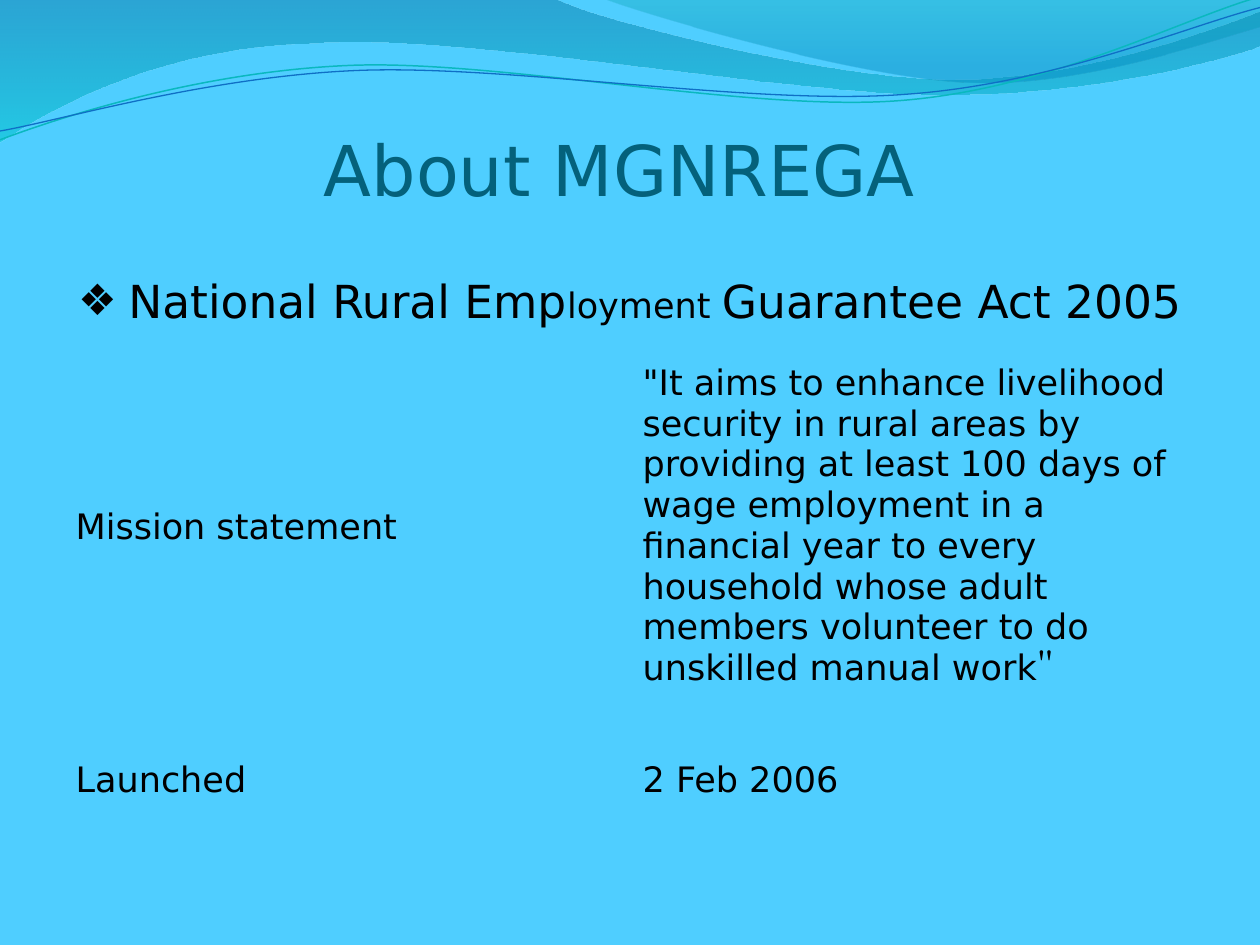
from dataclasses import dataclass
from lxml.etree import SubElement
from pptx import Presentation
from pptx.dml.color import RGBColor
from pptx.enum.text import MSO_ANCHOR as Anchor, PP_ALIGN as Align
from pptx.oxml.ns import qn
from pptx.util import Inches, Pt


@dataclass(frozen=True)
class Theme:
    background: str = "4FCEFF"
    title: str = "04617B"
    text: str = "000000"
    sans: str = "DejaVu Sans"
    serif: str = "TeX Gyre Pagella"
    title_size: int = 40
    act_size: int = 26
    quote_size: int = 24
    text_size: int = 20


theme = Theme()
WIDTH, HEIGHT = 10, 7.5
MARGIN = WIDTH * 0.05
CONTENT_WIDTH = WIDTH - 2 * MARGIN

TITLE = "About MGNREGA"
ACT = [
    (" ", theme.serif, theme.act_size),
    ("National Rural Emp", theme.sans, theme.act_size),
    ("loyment ", theme.sans, theme.text_size),
    ("Guarantee Act 2005", theme.sans, theme.act_size),
]
MISSION = (
    '"It aims to enhance livelihood security in rural areas by providing '
    "at least 100 days of wage employment in a financial year to every "
    "household whose adult members volunteer to do unskilled manual work"
)
FACTS = [
    ([("Mission statement", theme.sans, theme.text_size)],
     [(MISSION, theme.sans, theme.text_size),
      ('"', theme.serif, theme.quote_size)]),
    ([], []),
    ([("Launched", theme.sans, theme.text_size)],
     [("2 Feb 2006", theme.sans, theme.text_size)]),
    ([], []),
]
ROW_HEIGHTS = [2.72, 0.4, 0.48, 0.67]

BANDS = [
    ([(0, 0), (4.4, -0.01),
      (4.76, 0.17, 6.64, 0.63, 7.58, 0.63),
      (8.53, 0.63, 9.58, 0.26, 10, 0.09), (10.01, 0.36),
      (9.83, 0.44, 8.7, 0.76, 7.46, 0.75),
      (6.22, 0.75, 3.82, 0.28, 2.57, 0.34),
      (1.29, 0.36, 0.46, 0.83, -0.01, 1.13)],
     [(0, "0074A1", 45), (1, "00C6CF", 55)]),
    ([(4.79, -0.01),
      (5.09, 0.11, 6.82, 0.62, 7.69, 0.65),
      (8.56, 0.69, 9.61, 0.32, 10, 0.21), (10, 0)],
     [(0, "00A1A9", 30), (0.8, "008BBF", 45)]),
]
WAVES = [
    ([(0, 1.11),
      (0.48, 0.93, 1.58, 0.57, 2.77, 0.52),
      (3.95, 0.47, 5.93, 0.89, 7.13, 0.8),
      (8.33, 0.71, 9.38, 0.15, 9.98, -0.02)], "0AB8BF", 0.85),
    ([(0, 1.04),
      (0.47, 0.96, 1.64, 0.61, 2.83, 0.56),
      (4.03, 0.51, 5.97, 0.84, 7.17, 0.75),
      (8.36, 0.67, 9.41, 0.21, 10, 0.06)], "0F6FC6", 0.75),
]
NO_GRID_STYLE = "{2D5ABB26-0587-4C30-8999-92F81FD0307C}"


def rgb(value):
    return RGBColor.from_string(value)


def draw(slide, outline, close):
    corners = [tuple(map(Inches, segment[-2:])) for segment in outline]
    builder = slide.shapes.build_freeform(*corners[0])
    builder.add_line_segments(corners[1:], close=close)
    outlined = builder.convert_to_shape()
    outlined.shadow.inherit = False
    steps = list(outlined._element.spPr.iter(qn("a:lnTo")))
    for step, segment in zip(steps, outline[1:]):
        if len(segment) == 6:
            step.tag = qn("a:cubicBezTo")
            for child in list(step):
                step.remove(child)
            for x, y in zip(segment[::2], segment[1::2]):
                SubElement(step, qn("a:pt"), x=str(Inches(x) - outlined.left),
                           y=str(Inches(y) - outlined.top))
    return outlined


def add_band(slide, outline, stops):
    band = draw(slide, outline, True)
    band.line.fill.background()
    band.fill.gradient()
    band.fill.gradient_angle = 270
    for stop, (position, color, _) in zip(band.fill.gradient_stops, stops):
        stop.position = position
        stop.color.rgb = rgb(color)
    colors = band._element.spPr.iter(qn("a:srgbClr"))
    for color, (_, _, opacity) in zip(colors, stops):
        SubElement(color, qn("a:alpha"), val=str(opacity * 1000))


def add_wave(slide, outline, color, weight):
    wave = draw(slide, outline, False)
    wave.fill.background()
    wave.line.color.rgb = rgb(color)
    wave.line.width = Pt(weight)


def write(paragraph, parts, color):
    paragraph.font.color.rgb = rgb(color)
    for words, face, size in parts:
        run = paragraph.add_run()
        run.text = words
        run.font.name, run.font.size = face, Pt(size)
        run.font.color.rgb = rgb(color)


def add_text(slide, left, top, width, height, parts, color):
    frame = slide.shapes.add_textbox(
        *map(Inches, (left, top, width, height))).text_frame
    frame.word_wrap = True
    paragraph = frame.paragraphs[0]
    paragraph.alignment = Align.CENTER
    write(paragraph, parts, color)
    return frame


def add_bullet(paragraph):
    paragraph.space_before = Pt(theme.act_size * 0.2)
    props = paragraph._p.get_or_add_pPr()
    props.set("marL", str(Inches(0.3)))
    props.set("indent", str(-Inches(0.3)))
    spacing = props.find(qn("a:spcBef"))
    bullet = [("buClr", {}), ("buSzPct", {"val": "95000"}),
              ("buFont", {"typeface": theme.sans}), ("buChar", {"char": "❖"})]
    for tag, values in reversed(bullet):
        element = SubElement(props, qn(f"a:{tag}"), **values)
        if tag == "buClr":
            SubElement(element, qn("a:srgbClr"), val=theme.text)
        spacing.addnext(element)


def add_facts(slide):
    frame = slide.shapes.add_table(
        len(FACTS), 2, Inches(MARGIN), Inches(2.82),
        Inches(CONTENT_WIDTH), Inches(sum(ROW_HEIGHTS)))
    facts = frame.table
    facts.first_row = facts.horz_banding = False
    facts._tbl.tblPr.find(qn("a:tableStyleId")).text = NO_GRID_STYLE
    for row, height, entries in zip(facts.rows, ROW_HEIGHTS, FACTS):
        row.height = Inches(height)
        for cell, parts in zip(row.cells, entries):
            cell.fill.background()
            cell.vertical_anchor = Anchor.MIDDLE
            cell.margin_top = cell.margin_bottom = 0
            if parts:
                write(cell.text_frame.paragraphs[0], parts, theme.text)


def main():
    deck = Presentation()
    deck.slide_width, deck.slide_height = Inches(WIDTH), Inches(HEIGHT)
    slide = deck.slides.add_slide(deck.slide_layouts[6])
    slide.background.fill.solid()
    slide.background.fill.fore_color.rgb = rgb(theme.background)
    for band in BANDS:
        add_band(slide, *band)
    for wave in WAVES:
        add_wave(slide, *wave)
    title = add_text(slide, 0.33, 0.17, 9.17, 1.5,
                     [(TITLE, theme.sans, theme.title_size)], theme.title)
    title.vertical_anchor = Anchor.BOTTOM
    title.margin_left = title.margin_right = title.margin_bottom = 0
    act = add_text(slide, MARGIN, 2.12, CONTENT_WIDTH, 4.8, ACT, theme.text)
    add_bullet(act.paragraphs[0])
    add_facts(slide)
    deck.save("out.pptx")


if __name__ == "__main__":
    main()
